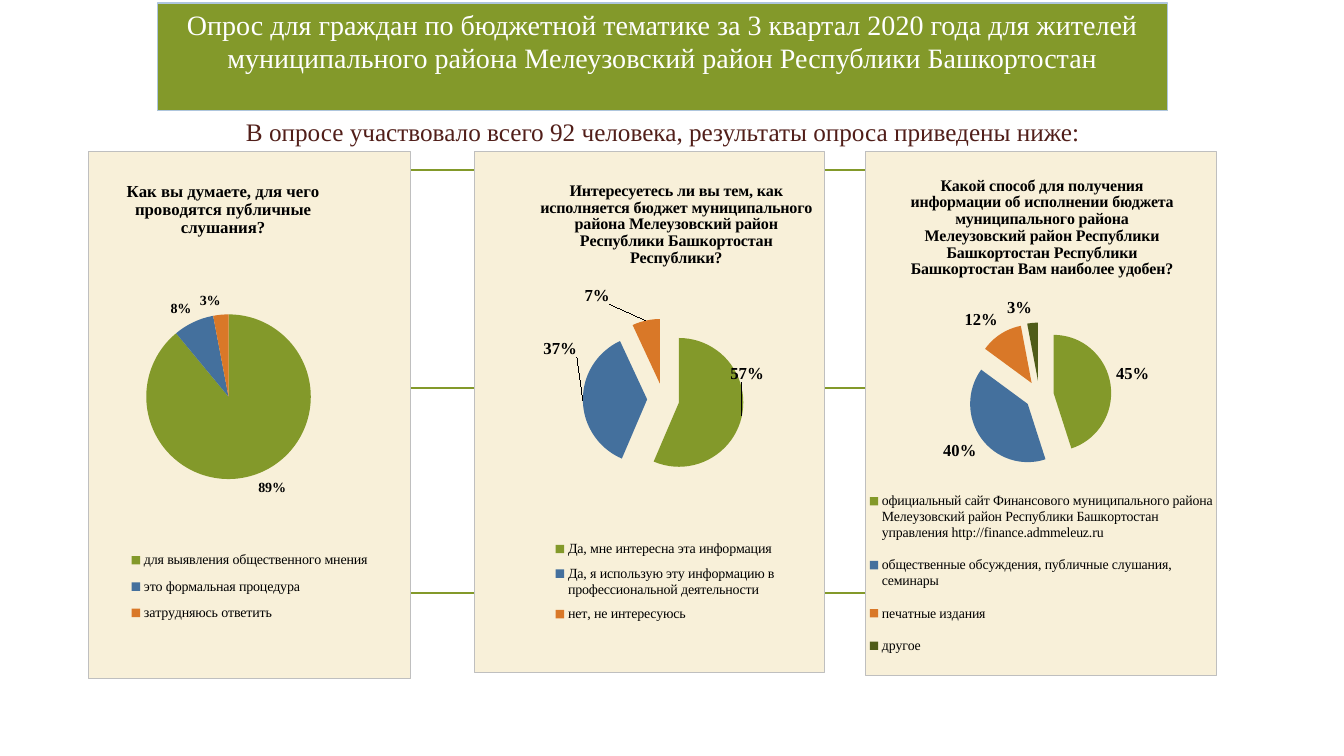
from copy import deepcopy
from lxml import etree
from pptx import Presentation
from pptx.chart.data import CategoryChartData as Data
from pptx.dml.color import RGBColor as Rgb
from pptx.enum.chart import XL_CHART_TYPE as Kind, XL_LABEL_POSITION as Spot, XL_LEGEND_POSITION as Side
from pptx.enum.shapes import MSO_CONNECTOR as Link, MSO_SHAPE as Form
from pptx.enum.text import MSO_ANCHOR as Anchor, MSO_AUTO_SIZE as Fit, PP_ALIGN as Align
from pptx.oxml import parse_xml
from pptx.oxml.ns import nsdecls, qn
from pptx.util import Inches, Pt

GREEN = Rgb(0x83, 0x99, 0x2A)
BLUE = Rgb(0x44, 0x70, 0x9D)
ORANGE = Rgb(0xD9, 0x78, 0x28)
OLIVE = Rgb(0x4F, 0x5C, 0x19)
CREAM = Rgb(0xF8, 0xF0, 0xD9)
GREY = Rgb(0xBF, 0xBF, 0xBF)
PALE = Rgb(0xAF, 0xC6, 0xDD)
BROWN = Rgb(0x51, 0x1E, 0x19)
WHITE = Rgb(0xFF, 0xFF, 0xFF)
BLACK = Rgb(0, 0, 0)
FACE = "Times New Roman"


class Survey:
    def __init__(self, deck):
        self.slide = deck.slides.add_slide(deck.slide_layouts[5])
        self.shapes = self.slide.shapes

    def style(self, font, size, color=BLACK, bold=False):
        font.name, font.size, font.bold = FACE, Pt(size), bold
        font.color.rgb = color

    def label(self, shape, text, size, color, top):
        frame = shape.text_frame
        frame.word_wrap = True
        frame.auto_size = Fit.NONE
        frame.vertical_anchor = Anchor.TOP
        frame.margin_top = Inches(top)
        frame.text = text
        para = frame.paragraphs[0]
        para.alignment = Align.CENTER
        self.style(para.font, size, color)

    def title(self, box, text):
        shape = self.shapes.title
        shape.left, shape.top, shape.width, shape.height = map(Inches, box)
        shape.fill.solid()
        shape.fill.fore_color.rgb = GREEN
        shape.line.color.rgb = PALE
        shape.line.width = Pt(0.75)
        self.label(shape, text, 20, WHITE, 0.04)

    def text(self, box, text):
        self.label(self.shapes.add_textbox(*map(Inches, box)), text, 18, BROWN, 0.05)

    def frame(self, box):
        shape = self.shapes.add_shape(Form.RECTANGLE, *map(Inches, box))
        shape.shadow.inherit = False
        shape.fill.background()
        shape.line.color.rgb = GREEN
        shape.line.width = Pt(1.25)

    def rule(self, left, right, y):
        line = self.shapes.add_connector(Link.STRAIGHT, *map(Inches, (left, y, right, y)))
        line.line.color.rgb = GREEN
        line.line.width = Pt(1.25)
        etree.SubElement(line._element.spPr, qn("a:effectLst"))

    def place(self, node, spot, inner=False):
        for old in node.findall(qn("c:layout")):
            node.remove(old)
        tags = [("layoutTarget", "inner")] if inner else []
        tags += [("xMode", "edge"), ("yMode", "edge")]
        tags += zip("xywh", spot)
        body = "".join(f'<c:{tag} val="{val}"/>' for tag, val in tags)
        layout = parse_xml(f'<c:layout {nsdecls("c")}><c:manualLayout>{body}</c:manualLayout></c:layout>')
        ahead = [kid for kid in node if kid.tag in (qn("c:tx"), qn("c:legendPos"))]
        node.insert(len(ahead), layout)

    def shift(self, labels, moves):
        base = labels._element
        looks = [base.find(qn(tag)) for tag in ("c:numFmt", "c:txPr")]
        for idx, (x, y) in reversed(list(enumerate(moves))):
            node = parse_xml(
                f'<c:dLbl {nsdecls("c")}><c:idx val="{idx}"/><c:layout><c:manualLayout>'
                f'<c:x val="{x}"/><c:y val="{y}"/></c:manualLayout></c:layout>'
                '<c:dLblPos val="outEnd"/><c:showLegendKey val="0"/><c:showVal val="1"/>'
                '<c:showCatName val="0"/><c:showSerName val="0"/><c:showPercent val="0"/>'
                '<c:showBubbleSize val="0"/></c:dLbl>')
            for look in looks:
                node.find(qn("c:dLblPos")).addprevious(deepcopy(look))
            base.insert(0, node)

    def pie(self, box, head, size, answers, plot, top, key, mark=12, burst=0, moves=()):
        data = Data(number_format='0"%"')
        data.categories = list(answers)
        data.add_series("Series 1", answers.values())
        chart = self.shapes.add_chart(Kind.PIE, *map(Inches, box), data).chart
        self.style(chart.font, 10)
        chart.has_title = True
        chart.chart_title.include_in_layout = False
        frame = chart.chart_title.text_frame
        frame.text = head
        frame.paragraphs[0].alignment = Align.CENTER
        self.style(frame.paragraphs[0].font, size, bold=True)
        chart.has_legend = True
        chart.legend.position = Side.BOTTOM
        chart.legend.include_in_layout = False
        self.style(chart.legend.font, 10)

        pie = chart.plots[0]
        pie.vary_by_categories = True
        row = pie.series[0]
        for idx, color in zip(range(len(answers)), (GREEN, BLUE, ORANGE, OLIVE)):
            fill = row.points[idx].format.fill
            fill.solid()
            fill.fore_color.rgb = color
        if burst:
            apart = parse_xml(f'<c:explosion {nsdecls("c")} val="{burst}"/>')
            row._element.find(qn("c:dPt")).addprevious(apart)
            for point in row._element.findall(qn("c:dPt")):
                point.find(qn("c:spPr")).addprevious(deepcopy(apart))
        labels = row.data_labels
        self.style(labels.font, mark, bold=True)
        labels.position = Spot.OUTSIDE_END
        exact = sum(answers.values()) == 100
        labels.show_percentage = exact
        labels.show_value = not exact
        labels.number_format = "0%" if exact else '0"%"'
        labels.number_format_is_linked = False
        self.shift(labels, moves)

        root = chart._chartSpace
        self.place(root.chart.plotArea, plot, True)
        self.place(chart.chart_title._element, top)
        self.place(chart.legend._element, key)
        look = parse_xml(
            f'<c:spPr {nsdecls("c", "a")}><a:solidFill><a:srgbClr val="{CREAM}"/></a:solidFill>'
            f'<a:ln w="{Pt(0.75)}"><a:solidFill><a:srgbClr val="{GREY}"/></a:solidFill></a:ln></c:spPr>')
        root.chart.addnext(look)


def main():
    deck = Presentation()
    deck.slide_width, deck.slide_height = Inches(13.33), Inches(7.5)
    page = Survey(deck)
    page.frame((2.55, 1.69, 8.25, 4.19))
    page.rule(2.94, 10.4, 3.85)
    page.title((1.56, 0.03, 10.02, 1.07),
               "Опрос для граждан по бюджетной тематике за 3 квартал 2020 года для жителей "
               "муниципального района Мелеузовский район Республики Башкортостан")
    page.pie((4.7, 1.5, 3.48, 5.18),
             "Интересуетесь ли вы тем, как исполняется бюджет муниципального района "
             "Мелеузовский район Республики Башкортостан Республики?", 11.5,
             {"Да, мне интересна эта информация": 57,
              "Да, я использую эту информацию в профессиональной деятельности": 37,
              "нет, не интересуюсь": 7},
             (0.31, 0.32, 0.46, 0.31), (0.18, 0.05), (0.17, 0.73, 0.75, 0.19), burst=25,
             moves=((-0.05, -0.1), (0, -0.1), (-0.1, -0.02)))
    page.text((1.85, 1.1, 9.45, 0.4),
              "В опросе участвовало всего 92 человека, результаты опроса приведены ниже:")
    page.pie((8.58, 1.5, 3.53, 5.21),
             "Какой способ для получения информации об исполнении бюджета муниципального "
             "района Мелеузовский район Республики Башкортостан Республики Башкортостан "
             "Вам наиболее удобен?", 11.5,
             {"официальный сайт Финансового муниципального района Мелеузовский район "
              "Республики Башкортостан управления http://finance.admmeleuz.ru": 45,
              "общественные обсуждения, публичные слушания, семинары": 40,
              "печатные издания": 12, "другое": 3},
             (0.29, 0.31, 0.41, 0.31), (0.12, 0.04), (0, 0.62, 1, 0.37), burst=25)
    page.pie((0.87, 1.5, 3.21, 5.24),
             "Как вы думаете, для чего проводятся публичные слушания?", 12,
             {"для выявления общественного мнения": 89,
              "это формальная процедура": 8, "затрудняюсь ответить": 3},
             (0.18, 0.14, 0.51, 0.65), (0.11, 0.05), (0.11, 0.74, 0.78, 0.17), mark=10)
    deck.save("out.pptx")


if __name__ == "__main__":
    main()
